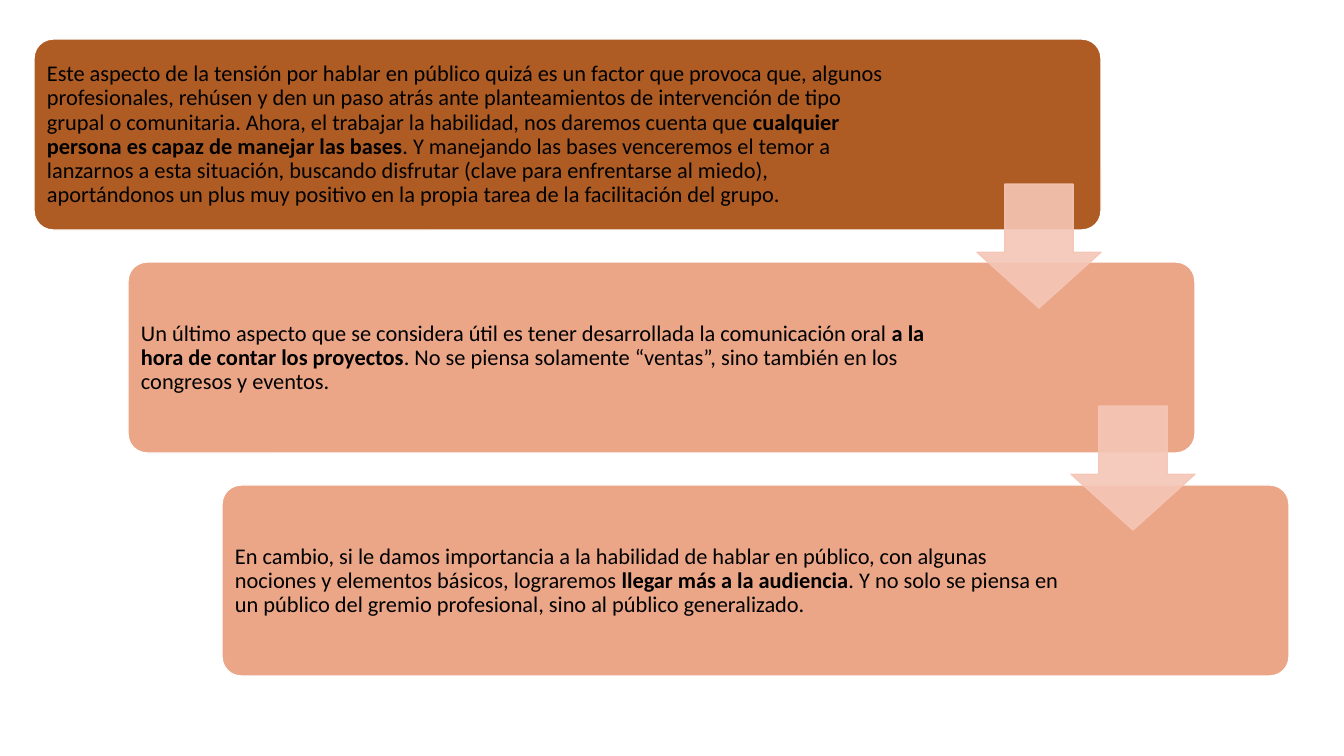
import pptx
import pptx.dml.color
import pptx.enum.shapes
import pptx.enum.text
import pptx.oxml
import pptx.oxml.ns
import pptx.util

PX = 12192000 / 1344
COLORS = {"brown": "AF5C24", "salmon": "EBA587", "arrow": "F5C6B6",
          "line": "FFFFFF", "text": "000000"}
SHAPES = pptx.enum.shapes.MSO_SHAPE

# Card colour, text width, and the plain, bold and plain parts of its text
CARDS = [
    ("brown", 862,
     ("Este aspecto de la tensión por hablar en público quizá es un factor que provoca que, "
      "algunos profesionales, rehúsen y den un paso atrás ante planteamientos de intervención "
      "de tipo grupal o comunitaria. Ahora, el trabajar la habilidad, nos daremos cuenta que ",
      "cualquier persona es capaz de manejar las bases",
      ". Y manejando las bases venceremos el temor a lanzarnos a esta situación, buscando "
      "disfrutar (clave para enfrentarse al miedo), aportándonos un plus muy positivo en la "
      "propia tarea de la facilitación del grupo.")),
    ("salmon", 839,
     ("Un último aspecto que se considera útil es tener desarrollada la comunicación oral ",
      "a la hora de contar los proyectos",
      ". No se piensa solamente “ventas”, sino también en los congresos y eventos.")),
    ("salmon", 839,
     ("En cambio, si le damos importancia a la habilidad de hablar en público, con algunas "
      "nociones y elementos básicos, lograremos ",
      "llegar más a la audiencia",
      ". Y no solo se piensa en un público del gremio profesional, sino al público "
      "generalizado.")),
]


def px(n):
    return pptx.util.Emu(round(n * PX))


def rgb(name):
    return pptx.dml.color.RGBColor.from_string(COLORS[name])


class Deck:
    font = "Calibri"
    size = 16
    inset = 7

    def __init__(self):
        self.prs = pptx.Presentation()
        self.prs.slide_width, self.prs.slide_height = px(1344), px(756)
        self.s = self.prs.slides.add_slide(self.prs.slide_layouts[6])

    def shape(self, kind, box, fill, line, adjustments, opacity=100):
        sp = self.s.shapes.add_shape(kind, *map(px, box))
        sp.shadow.inherit = False
        for i, value in enumerate(adjustments):
            sp.adjustments[i] = value
        sp.fill.solid()
        sp.fill.fore_color.rgb = rgb(fill)
        sp.line.color.rgb = rgb(line)
        sp.line.width = pptx.util.Pt(1)
        if opacity < 100:
            for color in sp.element.spPr.iter(pptx.oxml.ns.qn("a:srgbClr")):
                alpha = pptx.oxml.parse_xml(
                    f'<a:alpha {pptx.oxml.ns.nsdecls("a")} val="{opacity * 1000}"/>')
                color.append(alpha)

    def text(self, box, parts):
        """Add a paragraph whose every second part is bold."""
        tf = self.s.shapes.add_textbox(*map(px, box)).text_frame
        tf.word_wrap = True
        tf.vertical_anchor = pptx.enum.text.MSO_ANCHOR.MIDDLE
        tf.margin_left = tf.margin_right = px(self.inset)
        tf.margin_top = tf.margin_bottom = px(self.inset)
        p = tf.paragraphs[0]
        p.line_spacing = 0.9
        p.font.name = self.font
        p.font.size = pptx.util.Pt(self.size)
        p.font.color.rgb = rgb("text")
        for i, part in enumerate(parts):
            r = p.add_run()
            r.text = part
            r.font.bold = i % 2 == 1

    def card(self, left, top, fill, text_width, parts):
        self.shape(SHAPES.ROUNDED_RECTANGLE, (left, top, 1067, 191), fill, "line", [0.1])
        self.text((left + 6, top + 6, text_width, 180), parts)

    def arrow(self, left, top):
        self.shape(SHAPES.DOWN_ARROW, (left, top, 124, 124), "arrow", "arrow",
                   [0.55, 0.45], opacity=90)


def main():
    deck = Deck()
    for i, (fill, text_width, parts) in enumerate(CARDS):
        deck.card(34 + 94 * i, 39 + 223 * i, fill, text_width, parts)
    for i in range(len(CARDS) - 1):
        deck.arrow(977 + 94 * i, 184 + 222 * i)
    deck.prs.save("out.pptx")


if __name__ == "__main__":
    main()
